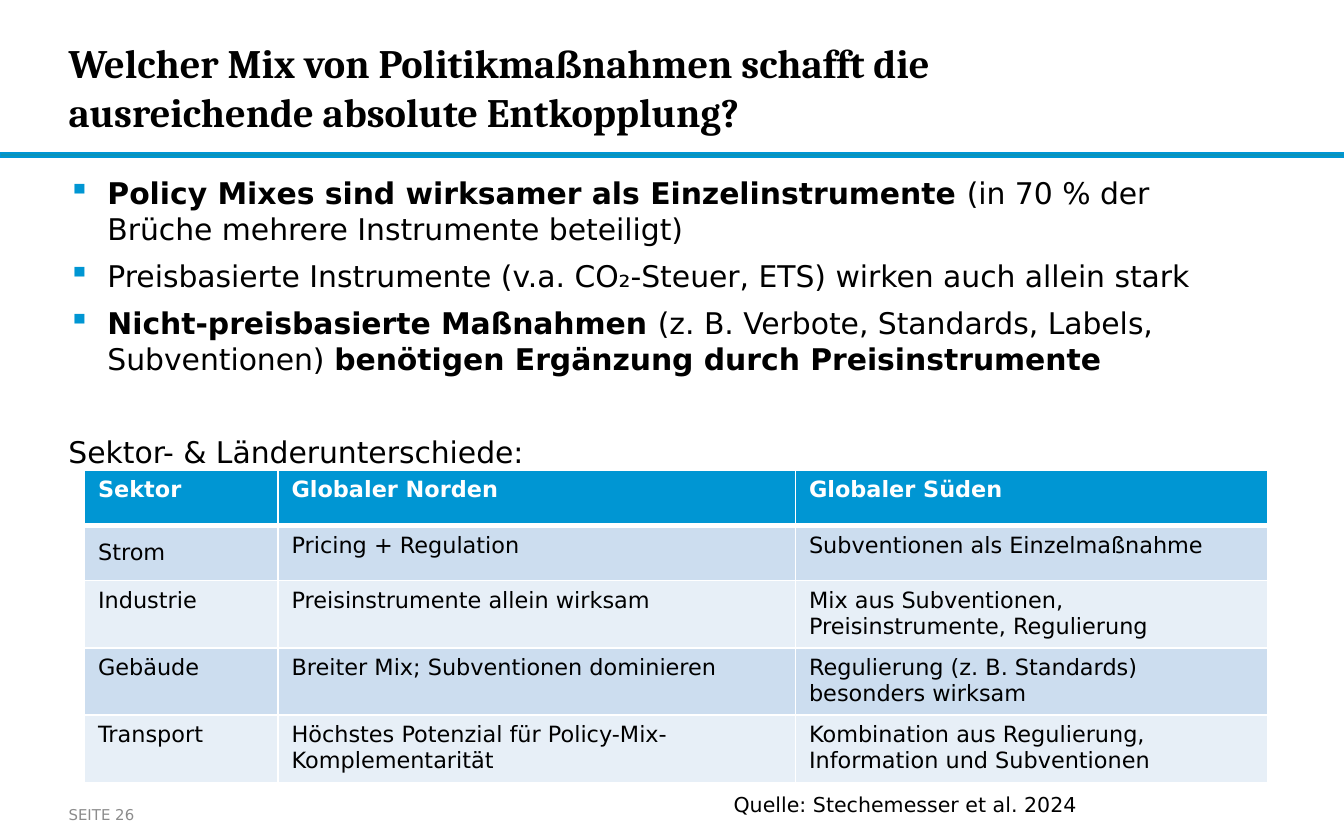
from lxml import etree
from pptx import Presentation
from pptx.dml.color import RGBColor
from pptx.enum.shapes import MSO_SHAPE
from pptx.enum.text import MSO_ANCHOR
from pptx.oxml.ns import qn
from pptx.util import Inches, Pt

RECTANGLE = MSO_SHAPE.RECTANGLE
TOP, MIDDLE = MSO_ANCHOR.TOP, MSO_ANCHOR.MIDDLE
BODY_FONT, TITLE_FONT = "DejaVu Sans", "Cambria"
BLUE, BLACK, WHITE, GREY = "0096D3", "000000", "FFFFFF", "8C8C8C"
BANDS = ["CCDDEF", "E7EFF7"]
LEFT = Inches(0.51)
INDENT = Inches(0.29)


def color(hex_code):
    return RGBColor.from_string(hex_code)


def write(frame, paragraphs, size, font=BODY_FONT, ink=BLACK, anchor=TOP,
          inset=(0, 0.05), wrap=True, bullets=0, after=0):
    """Each paragraph is a list of (text, bold) runs; the first `bullets` get a marker."""
    frame.word_wrap = wrap
    frame.vertical_anchor = anchor
    frame.margin_left = frame.margin_right = Inches(inset[0])
    frame.margin_top = frame.margin_bottom = Inches(inset[1])
    for index, runs in enumerate(paragraphs):
        paragraph = frame.paragraphs[0] if index == 0 else frame.add_paragraph()
        if index < bullets:
            properties = paragraph._p.get_or_add_pPr()
            properties.set("marL", str(INDENT))
            properties.set("indent", str(-INDENT))
            marker_color = etree.SubElement(properties, qn("a:buClr"))
            etree.SubElement(marker_color, qn("a:srgbClr"), val=BLUE)
            etree.SubElement(properties, qn("a:buChar"), char="▪")
        paragraph.space_after = Pt(after)
        for text, bold in runs:
            run = paragraph.add_run()
            run.text = text
            run.font.size, run.font.name, run.font.bold = Pt(size), font, bold
            run.font.color.rgb = color(ink)


prs = Presentation()
prs.slide_width, prs.slide_height = Inches(10), Inches(6.25)
slide = prs.slides.add_slide(prs.slide_layouts[6])
shapes = slide.shapes

# Title and rule
rule = shapes.add_shape(RECTANGLE, 0, Inches(1.14), prs.slide_width, Inches(0.03))
rule.shadow.inherit = False
rule.fill.solid()
rule.fill.fore_color.rgb = color("0C94B7")
rule.line.color.rgb = color(BLUE)
rule.line.width = Pt(1)

title = shapes.add_textbox(LEFT, Inches(0.15), Inches(7.48), Inches(0.99))
write(title.text_frame,
      [[("Welcher Mix von Politikmaßnahmen schafft die ausreichende absolute Entkopplung?", True)]],
      21.6, font=TITLE_FONT, anchor=MIDDLE, inset=(0, 0))

# Findings
findings = shapes.add_textbox(LEFT, Inches(1.25), Inches(8.87), Inches(4.21))
write(findings.text_frame, [
    [("Policy Mixes sind wirksamer als Einzelinstrumente ", True),
     ("(in 70 % der Brüche mehrere Instrumente beteiligt)", False)],
    [("Preisbasierte Instrumente (v.a. CO₂-Steuer, ETS) wirken auch allein stark", False)],
    [("Nicht-preisbasierte Maßnahmen ", True),
     ("(z. B. Verbote, Standards, Labels, Subventionen) ", False),
     ("benötigen Ergänzung durch Preisinstrumente", True)],
    [("Sektor- & Länderunterschiede:", False)],
], 16, bullets=3, after=6)
findings.text_frame.paragraphs[-1].space_before = Pt(25)

# Sector table
sectors = [
    ("Sektor", "Globaler Norden", "Globaler Süden"),
    ("Strom", "Pricing + Regulation", "Subventionen als Einzelmaßnahme"),
    ("Industrie", "Preisinstrumente allein wirksam",
     "Mix aus Subventionen, Preisinstrumente, Regulierung"),
    ("Gebäude", "Breiter Mix; Subventionen dominieren",
     "Regulierung (z. B. Standards) besonders wirksam"),
    ("Transport", "Höchstes Potenzial für Policy-Mix-Komplementarität",
     "Kombination aus Regulierung, Information und Subventionen"),
]
column_widths = [1.44, 3.85, 3.51]
row_height = Inches(0.41)
table = shapes.add_table(len(sectors), len(column_widths), Inches(0.63), Inches(3.5),
                         Inches(sum(column_widths)), row_height * len(sectors)).table
for column, width in zip(table.columns, column_widths):
    column.width = Inches(width)
for r, entries in enumerate(sectors):
    table.rows[r].height = row_height
    header = r == 0
    for c, entry in enumerate(entries):
        cell = table.cell(r, c)
        write(cell.text_frame, [[(entry, header)]], 12, ink=WHITE if header else BLACK)
        cell.margin_left = cell.margin_right = Inches(0.1)
        cell.margin_top = cell.margin_bottom = Inches(0.05)
        cell.vertical_anchor = MIDDLE if entry == "Strom" else TOP
        borders = cell._tc.get_or_add_tcPr()
        for side in ("lnL", "lnR", "lnT", "lnB"):
            heavy = (header and side == "lnB") or (r == 1 and side == "lnT")
            border = etree.SubElement(borders, qn("a:" + side), w=str(Pt(3 if heavy else 1)))
            border_fill = etree.SubElement(border, qn("a:solidFill"))
            etree.SubElement(border_fill, qn("a:srgbClr"), val=WHITE)
        cell.fill.solid()
        cell.fill.fore_color.rgb = color(BLUE if header else BANDS[(r - 1) % 2])

# Footer
page = shapes.add_textbox(LEFT, Inches(5.92), Inches(0.98), Inches(0.28))
write(page.text_frame, [[("SEITE 26", False)]], 8, ink=GREY, anchor=MIDDLE)
reference = shapes.add_textbox(Inches(5.36), Inches(5.84), Inches(2.87), Inches(0.29))
write(reference.text_frame, [[("Quelle: Stechemesser et al. 2024", False)]], 11,
      inset=(0.1, 0.05), wrap=False)

prs.save("out.pptx")
